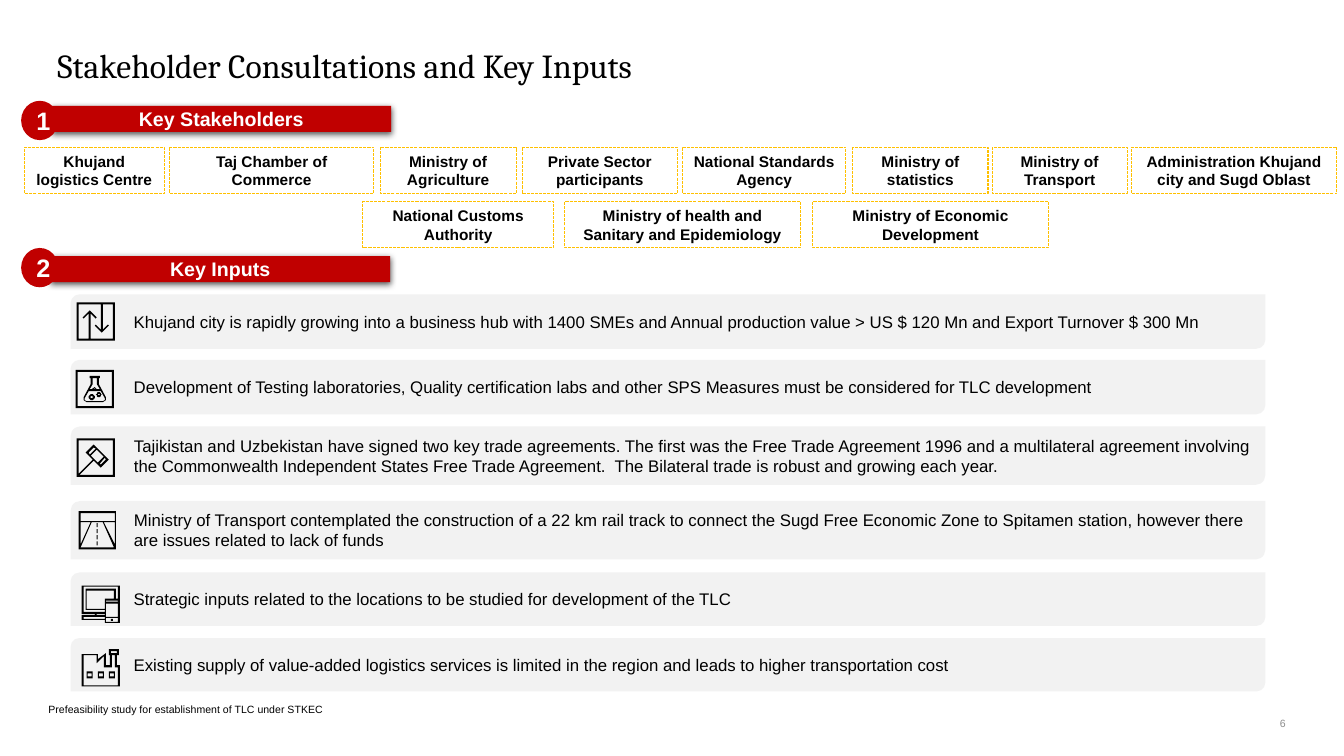
from dataclasses import dataclass
from math import cos, pi, sin

from lxml import etree
from pptx import Presentation
from pptx.dml.color import RGBColor
from pptx.enum import dml, shapes, text
from pptx.oxml import ns
from pptx.util import Inches, Pt


@dataclass(frozen=True)
class Theme:
    heading_font: str = "Cambria"
    body_font: str = "Arial"
    red: str = "C00000"
    gold: str = "FFC000"
    panel: str = "F2F2F2"
    black: str = "000000"
    white: str = "FFFFFF"
    grey: str = "8C8C8C"
    title_size: float = 24
    number_size: float = 18
    banner_size: float = 14
    input_size: float = 12
    stakeholder_size: float = 11
    footer_size: float = 7.5


def box(left, top, right, bottom):
    return [(left, top), (right, top), (right, bottom), (left, bottom)]


def ring(x, y, radius):
    return [(x + radius * cos(step * pi / 8), y + radius * sin(step * pi / 8)) for step in range(16)]


ARROWS = [
    box(0, 0, 38, 38),
    [(36, 36), (14, 36), (14, 11), (19, 16), (20, 15), (13, 8), (6, 15), (7, 16),
     (12, 11), (12, 36), (2, 36), (2, 2), (24, 2), (24, 27), (19, 22), (18, 23),
     (25, 30), (32, 23), (31, 22), (26, 27), (26, 2), (36, 2)],
]
FLASK = [
    box(0, 0, 38, 38),
    box(2, 2, 36, 36),
    [(11, 32), (27, 32), (30, 30), (30, 27), (23, 14), (23, 8), (24, 8), (24, 6),
     (14, 6), (14, 8), (15, 8), (15, 14), (8, 27), (8, 30)],
    [(17, 14), (17, 8), (21, 8), (21, 14), (24, 19), (21, 19), (19, 17), (16, 19), (14, 19)],
    [(20, 19), (18, 19), (19, 18)],
    [(9, 28), (13, 21), (25, 21), (29, 28), (29, 30), (27, 31), (11, 31), (9, 30)],
    ring(23, 24.5, 2.5), ring(23, 24.5, 1),
    ring(16, 27, 2.8), ring(16, 27, 1),
]
GAVEL = [
    box(0, 0, 38, 38),
    [(36, 36), (3, 36), (17, 22), (24, 29), (32, 21), (17, 6), (9, 14), (16, 21),
     (2, 35), (2, 2), (36, 2)],
    [(12, 14), (17, 9), (19, 10), (13, 16)],
    [(20, 11), (27, 18), (21, 24), (14, 17)],
    [(29, 21), (24, 26), (23, 25), (28, 19)],
]
ROAD = [
    box(0, 0, 37, 38),
    [(13, 11), (24, 11), (35, 36), (2, 36)],
    [(2, 33), (2, 11), (12, 11)],
    [(25, 11), (36, 11), (36, 33)],
    box(2, 2, 36, 10),
] + [box(18, top, 19, top + 4) for top in (12, 18, 24, 30)]
COMPUTER = [
    [(38, 0), (0, 0), (0, 28), (13, 28), (13, 29), (0, 29), (0, 34), (23, 34), (23, 37), (38, 37)],
    [(36, 13), (34, 13), (34, 3), (4, 3), (4, 24), (23, 24), (23, 26), (2, 26), (2, 1), (36, 1)],
    [(23, 23), (5, 23), (5, 5), (32, 5), (32, 13), (23, 13)],
    box(24, 15, 36, 16), box(24, 18, 36, 31), box(24, 32, 36, 36),
    box(15, 28, 23, 29), box(2, 31, 23, 33), box(29, 33, 31, 35),
]
FACTORY = [
    [(35, 16), (35, 6), (37, 6), (37, 0), (27, 0), (27, 6), (28, 6), (28, 16), (24, 16),
     (24, 4), (16, 10), (16, 5), (0, 5), (0, 37), (38, 37), (38, 16)],
    [(36, 36), (2, 36), (2, 6), (15, 6), (15, 14), (22, 7), (22, 18), (30, 18),
     (30, 6), (33, 6), (33, 18), (36, 18)],
    box(29, 2, 35, 4),
]
for window in (5, 16, 27):
    FACTORY += [box(window, 22, window + 6, 29), box(window + 1, 24, window + 5, 27)]

STAKEHOLDER_ROWS = [
    (1.46, [
        (0.24, 1.39, "Khujand logistics Centre"),
        (1.68, 2.03, "Taj Chamber of Commerce"),
        (3.77, 1.35, "Ministry of Agriculture"),
        (5.18, 1.54, "Private Sector participants"),
        (6.77, 1.62, "National Standards Agency"),
        (8.46, 1.34, "Ministry of statistics"),
        (9.84, 1.34, "Ministry of Transport"),
        (11.22, 2.04, "Administration Khujand city and Sugd Oblast"),
    ]),
    (2, [
        (3.6, 1.89, "National Customs Authority"),
        (5.6, 2.34, "Ministry of health and Sanitary and Epidemiology"),
        (8.06, 2.34, "Ministry of Economic Development"),
    ]),
]
INPUTS = [
    (2.92, 0.54, ARROWS, 0.76, 3, "Khujand city is rapidly growing into a business hub with 1400 SMEs and Annual production value > US $ 120 Mn and Export Turnover $ 300 Mn"),
    (3.57, 0.54, FLASK, 0.75, 3.67, "Development of Testing laboratories, Quality certification labs and other SPS Measures must be considered for TLC development"),
    (4.23, 0.58, GAVEL, 0.76, 4.35, "Tajikistan and Uzbekistan have signed two key trade agreements. The first was the Free Trade Agreement 1996 and a multilateral agreement involving the Commonwealth Independent States Free Trade Agreement.  The Bilateral trade is robust and growing each year."),
    (4.97, 0.58, ROAD, 0.78, 5.07, "Ministry of Transport contemplated the construction of a 22 km rail track to connect the Sugd Free Economic Zone to Spitamen station, however there are issues related to lack of funds"),
    (5.68, 0.53, COMPUTER, 0.81, 5.81, "Strategic inputs related to the locations to be studied for development of the TLC"),
    (6.33, 0.53, FACTORY, 0.81, 6.44, "Existing supply of value-added logistics services is limited in the region and leads to higher transportation cost"),
]


class SlideBuilder:
    def __init__(self, slide, theme):
        self.slide = slide
        self.theme = theme

    def set_text(self, shape, words, size, color, bold=False, align="LEFT", anchor="MIDDLE", insets=None, font=None):
        frame = shape.text_frame
        frame.text = words
        frame.word_wrap = True
        frame.vertical_anchor = text.MSO_ANCHOR[anchor]
        if insets:
            frame.margin_left, frame.margin_top, frame.margin_right, frame.margin_bottom = map(Inches, insets)
        paragraph = frame.paragraphs[0]
        paragraph.alignment = text.PP_ALIGN[align]
        run_font = paragraph.runs[0].font
        run_font.name = font or self.theme.body_font
        run_font.size = Pt(size)
        run_font.bold = bold
        run_font.color.rgb = RGBColor.from_string(color)
        return paragraph

    def paint(self, shape, fill=None):
        shape.shadow.inherit = False
        shape.line.fill.background()
        if fill:
            shape.fill.solid()
            shape.fill.fore_color.rgb = RGBColor.from_string(fill)
        else:
            shape.fill.background()

    def shape(self, kind, place, fill=None):
        shape = self.slide.shapes.add_shape(shapes.MSO_SHAPE[kind], *map(Inches, place))
        self.paint(shape, fill)
        return shape

    def title(self, words):
        title = self.slide.shapes.title
        title.left, title.top, title.width, title.height = map(Inches, (0.57, 0.34, 12.36, 0.67))
        paragraph = self.set_text(title, words, self.theme.title_size, self.theme.black,
                                  insets=(0, 0, 0, 0), font=self.theme.heading_font)
        paragraph.line_spacing = 0.85

    def section(self, number, words, left, top, circle_top):
        banner = self.shape("RECTANGLE", (left, top, 3.37, 0.26), self.theme.red)
        effects = banner._element.spPr.find(ns.qn("a:effectLst"))
        shadow = etree.SubElement(effects, ns.qn("a:outerShdw"), blurRad=str(Pt(4.5)),
                                  dist=str(Pt(1.5)), dir="5400000", rotWithShape="0")
        color = etree.SubElement(shadow, ns.qn("a:srgbClr"), val=self.theme.black)
        etree.SubElement(color, ns.qn("a:alpha"), val="63000")
        self.set_text(banner, words, self.theme.banner_size, self.theme.white, True, "CENTER")
        circle = self.shape("OVAL", (0.21, circle_top, 0.37, 0.39), self.theme.red)
        self.set_text(circle, number, self.theme.number_size, self.theme.white, True, "CENTER")

    def stakeholder(self, left, top, width, words):
        card = self.shape("RECTANGLE", (left, top, width, 0.46))
        card.line.color.rgb = RGBColor.from_string(self.theme.gold)
        card.line.width = 0
        card.line.dash_style = dml.MSO_LINE.SQUARE_DOT
        paragraph = self.set_text(card, words, self.theme.stakeholder_size, self.theme.black,
                                  True, "CENTER", insets=(0.1, 0.1, 0.1, 0.1))
        paragraph.space_after = Pt(9)

    def key_input(self, top, height, words):
        panel = self.shape("ROUND_2_DIAG_RECTANGLE", (0.7, top, 11.85, height), self.theme.panel)
        self.set_text(panel, words, self.theme.input_size, self.theme.black, insets=(0.6, 0.05, 0.1, 0.05))

    def icon(self, contours, left, top):
        builder = self.slide.shapes.build_freeform(*contours[0][0], scale=Inches(0.01))
        for index, contour in enumerate(contours):
            if index:
                builder.move_to(*contour[0])
            builder.add_line_segments(contour[1:], close=True)
        self.paint(builder.convert_to_shape(Inches(left), Inches(top)), self.theme.black)

    def footer(self, words, place, color, **layout):
        label = self.slide.shapes.add_textbox(*map(Inches, place))
        self.set_text(label, words, self.theme.footer_size, color, **layout)


def main():
    presentation = Presentation()
    presentation.slide_width, presentation.slide_height = Inches(13.33), Inches(7.5)
    theme = Theme()
    builder = SlideBuilder(presentation.slides.add_slide(presentation.slide_layouts[5]), theme)
    builder.title("Stakeholder Consultations and Key Inputs")
    builder.section("1", "Key Stakeholders", 0.51, 1.05, 1)
    builder.section("2", "Key Inputs", 0.5, 2.54, 2.46)
    for top, row in STAKEHOLDER_ROWS:
        for left, width, words in row:
            builder.stakeholder(left, top, width, words)
    for top, height, contours, icon_left, icon_top, words in INPUTS:
        builder.key_input(top, height, words)
        builder.icon(contours, icon_left, icon_top)
    builder.footer("Prefeasibility study for establishment of TLC under STKEC", (0.48, 6.95, 5.99, 0.15),
                   theme.black, anchor="BOTTOM", insets=(0, 0, 0, 0))
    builder.footer("6", (10.92, 7.1, 1.93, 0.15), theme.grey, align="RIGHT")
    presentation.save("out.pptx")


if __name__ == "__main__":
    main()
